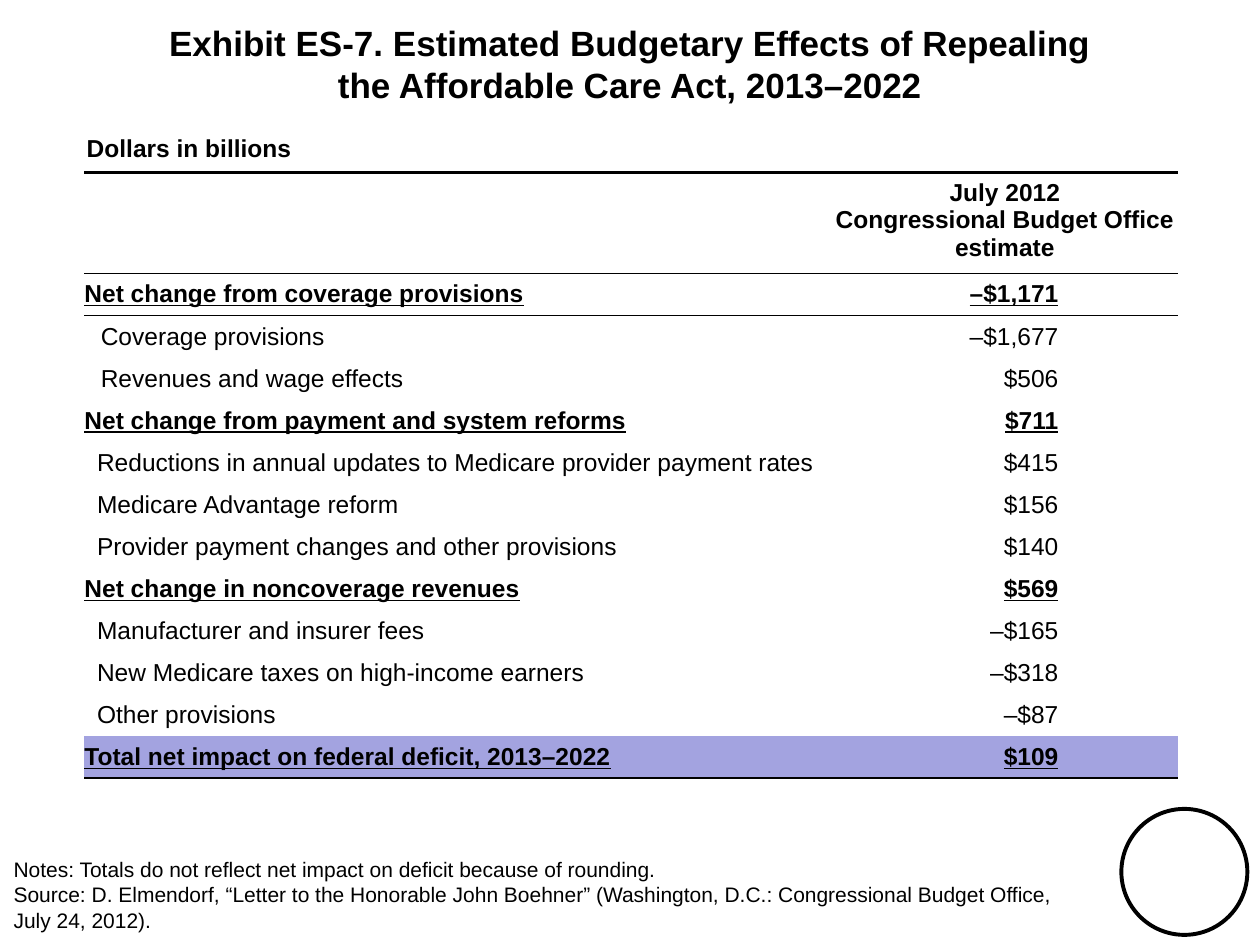
from pptx import Presentation
from pptx.dml.color import RGBColor
from pptx.enum.shapes import MSO_SHAPE
from pptx.enum.text import MSO_ANCHOR as ANCHOR, MSO_AUTO_SIZE as AUTO, PP_ALIGN as ALIGN
from pptx.oxml import parse_xml
from pptx.oxml.ns import nsdecls, qn
from pptx.util import Inches, Pt

FONT, BLACK, WHITE, LILAC = "Arial", "000000", "FFFFFF", "A3A3E0"
NO_STYLE = "{2D5ABB26-0587-4C30-8999-92F81FD0307C}"
TABLE_LEFT, TABLE_TOP = 0.67, 1.37
COLUMNS = (5.93, 2.75)
HEADER_HEIGHT, ROW_HEIGHT = 0.8, 0.334

# Label, estimate, left indent; rows without an indent are subtotals
ROWS = [
    ("Net change from coverage provisions", "–$1,171", 0),
    ("Coverage provisions", "–$1,677", 0.13),
    ("Revenues and wage effects", "$506", 0.13),
    ("Net change from payment and system reforms", "$711", 0),
    ("Reductions in annual updates to Medicare provider payment rates", "$415", 0.1),
    ("Medicare Advantage reform", "$156", 0.1),
    ("Provider payment changes and other provisions", "$140", 0.1),
    ("Net change in noncoverage revenues", "$569", 0),
    ("Manufacturer and insurer fees", "–$165", 0.1),
    ("New Medicare taxes on high-income earners", "–$318", 0.1),
    ("Other provisions", "–$87", 0.1),
    ("Total net impact on federal deficit, 2013–2022", "$109", 0),
]


def color(value):
    return RGBColor.from_string(value)


def write(tf, text, size, bold=False, underline=False, align=ALIGN.LEFT):
    tf.text = text
    tf.word_wrap = True
    for p in tf.paragraphs:
        p.alignment = align
        for r in p.runs:
            r.font.name, r.font.size = FONT, Pt(size)
            r.font.bold, r.font.underline = bold, underline
            r.font.color.rgb = color(BLACK)


def add_text(slide, box, text, size, bold=False):
    sp = slide.shapes.add_textbox(*map(Inches, box))
    write(sp.text_frame, text, size, bold)


def set_border(cell, side, width):
    pr = cell._tc.get_or_add_tcPr()
    line = parse_xml(
        f'<a:{side} {nsdecls("a")} w="{Pt(width)}"><a:solidFill>'
        f'<a:srgbClr val="{BLACK}"/></a:solidFill></a:{side}>')
    # Borders come before the fill, top before bottom
    pr.insert(len(pr.findall(qn("a:lnT"))), line)


def fill_cell(cell, text, fill, left=0, right=0, anchor=ANCHOR.MIDDLE, **style):
    cell.margin_left, cell.margin_right = Inches(left), Inches(right)
    cell.margin_top = cell.margin_bottom = Inches(0.05)
    cell.vertical_anchor = anchor
    cell.fill.solid()
    cell.fill.fore_color.rgb = color(fill)
    write(cell.text_frame, text, 14, **style)


def add_estimates(slide):
    height = HEADER_HEIGHT + ROW_HEIGHT * len(ROWS)
    box = (TABLE_LEFT, TABLE_TOP, sum(COLUMNS), height)
    table = slide.shapes.add_table(len(ROWS) + 1, 2, *map(Inches, box)).table
    table.first_row = table.horz_banding = False
    table._tbl.tblPr.find(qn("a:tableStyleId")).text = NO_STYLE
    for column, width in zip(table.columns, COLUMNS):
        column.width = Inches(width)
    for i, row in enumerate(table.rows):
        row.height = Inches(ROW_HEIGHT if i else HEADER_HEIGHT)

    # Header
    for i, text in enumerate(("", "July 2012\nCongressional Budget Office estimate")):
        fill_cell(table.cell(0, i), text, WHITE, anchor=ANCHOR.TOP,
                  bold=True, align=ALIGN.CENTER)

    # Body, with the total highlighted
    for i, (label, value, indent) in enumerate(ROWS, 1):
        fill = LILAC if i == len(ROWS) else WHITE
        style = dict(bold=not indent, underline=not indent)
        fill_cell(table.cell(i, 0), label, fill, left=indent, **style)
        fill_cell(table.cell(i, 1), value, fill, right=0.95, align=ALIGN.RIGHT, **style)

    # Rules
    for i in range(len(COLUMNS)):
        set_border(table.cell(0, i), "lnT", 1.5)
        set_border(table.cell(0, i), "lnB", 1)
        set_border(table.cell(1, i), "lnT", 1)
        set_border(table.cell(len(ROWS), i), "lnB", 1.5)


def add_title(slide, text):
    title = slide.shapes.title
    title.left, title.top, title.width, title.height = map(Inches, (0, 0.1, 10, 0.8))
    write(title.text_frame, text, 20, bold=True, align=ALIGN.CENTER)
    title.text_frame.auto_size = AUTO.NONE
    title.text_frame.vertical_anchor = ANCHOR.MIDDLE


def add_emblem(slide):
    sp = slide.shapes.add_shape(MSO_SHAPE.OVAL, *map(Inches, (8.9, 6.42, 1, 1)))
    sp.shadow.inherit = False
    sp.fill.background()
    sp.line.color.rgb = color(BLACK)
    sp.line.width = Pt(2.25)


def main():
    prs = Presentation()
    prs.slide_width, prs.slide_height = Inches(10), Inches(7.5)
    slide = prs.slides.add_slide(prs.slide_layouts[5])
    add_emblem(slide)
    add_estimates(slide)
    add_text(slide, (0.59, 1.01, 2.17, 0.33), "Dollars in billions", 14, bold=True)
    add_text(slide, (0.01, 6.75, 8.76, 0.71),
             "Notes: Totals do not reflect net impact on deficit because of rounding.\n"
             "Source: D. Elmendorf, “Letter to the Honorable John Boehner” "
             "(Washington, D.C.: Congressional Budget Office, July 24, 2012).", 12)
    add_title(slide, "Exhibit ES-7. Estimated Budgetary Effects of Repealing\v"
                     "the Affordable Care Act, 2013–2022")
    prs.save("out.pptx")


if __name__ == "__main__":
    main()
